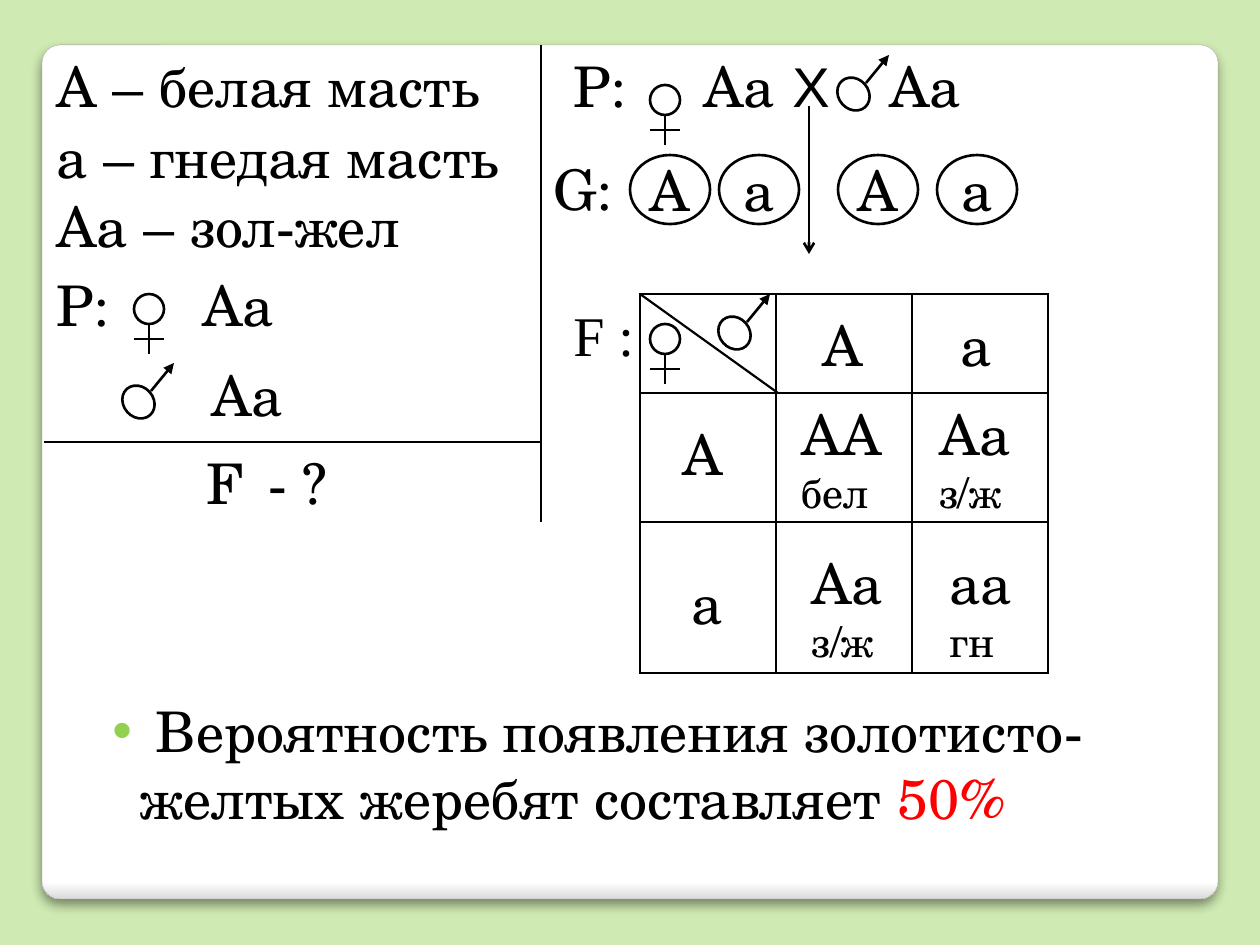
from dataclasses import dataclass
from typing import NamedTuple

from lxml.etree import SubElement
from pptx import Presentation
from pptx.dml.color import RGBColor
from pptx.enum.shapes import MSO_CONNECTOR as CONN, MSO_SHAPE as SHAPE
from pptx.enum.text import MSO_ANCHOR as ANCHOR, MSO_AUTO_SIZE as AUTO, PP_ALIGN as ALIGN
from pptx.oxml import parse_xml
from pptx.oxml.ns import nsdecls, qn
from pptx.util import Emu, Pt

EMU_PER_PX = 914400 / 126


@dataclass(frozen=True)
class Theme:
    back: str = "CFEAB2"
    card: str = "FFFFFF"
    card_edge: str = "DADADA"
    card_line: str = "A4A4A4"
    ink: str = "000000"
    bullet: str = "92D050"
    accent: str = "FF0000"
    font: str = "TeX Gyre Schola"
    sans: str = "Arial"
    roman: str = "Times New Roman"
    large: int = 32
    small: int = 24
    line: float = 1.5
    thin: float = 1.25


T = Theme()


class Run(NamedTuple):
    text: str
    size: int = T.large
    font: str = T.font
    color: str = T.ink


class Label(NamedTuple):
    x: int
    y: int
    w: int
    h: int
    paras: list[list[Run]]
    tabs: tuple[int, ...] = ()
    align: ALIGN = ALIGN.LEFT


class Line(NamedTuple):
    x1: int
    y1: int
    x2: int
    y2: int
    head: str = ""
    width: float = T.line


def px(n: float) -> Emu:
    return Emu(round(n * EMU_PER_PX))


def rgb(color: str) -> RGBColor:
    return RGBColor.from_string(color)


def add_runs(p, runs: list[Run]) -> None:
    for run in runs:
        r = p.add_run()
        r.text = run.text
        r.font.size = Pt(run.size)
        r.font.name = run.font
        r.font.color.rgb = rgb(run.color)


def add_label(shapes, label: Label):
    """Place a text box; labels with tab stops wrap, the others keep one line."""
    sp = shapes.add_textbox(px(label.x), px(label.y), px(label.w), px(label.h))
    tf = sp.text_frame
    tf.word_wrap = bool(label.tabs)
    tf.auto_size = AUTO.SHAPE_TO_FIT_TEXT
    for i, runs in enumerate(label.paras):
        p = tf.add_paragraph() if i else tf.paragraphs[0]
        p.alignment = label.align
        if label.tabs:
            stops = SubElement(p._p.get_or_add_pPr(), qn("a:tabLst"))
            for tab in label.tabs:
                SubElement(stops, qn("a:tab"), pos=str(px(tab)), algn="l")
        add_runs(p, runs)
    return sp


def add_line(shapes, line: Line) -> None:
    cx = shapes.add_connector(CONN.STRAIGHT, px(line.x1), px(line.y1), px(line.x2), px(line.y2))
    cx.line.color.rgb = rgb(T.ink)
    cx.line.width = Pt(line.width)
    if line.head:
        SubElement(cx.line._get_or_add_ln(), qn("a:tailEnd"), type=line.head)
    SubElement(cx._element.spPr, qn("a:effectLst"))


def add_ellipse(shapes, x: int, y: int, w: int, h: int):
    sp = shapes.add_shape(SHAPE.OVAL, px(x), px(y), px(w), px(h))
    sp.shadow.inherit = False
    sp.fill.solid()
    sp.fill.fore_color.rgb = rgb(T.card)
    sp.line.color.rgb = rgb(T.ink)
    sp.line.width = Pt(T.line)
    return sp


def add_female(shapes, x: int, y: int) -> None:
    group = shapes.add_group_shape().shapes
    add_ellipse(group, x, y, 30, 30)
    add_line(group, Line(x + 15, y + 30, x + 15, y + 60))
    add_line(group, Line(x, y + 45, x + 30, y + 45))


def add_male(shapes, x: int, y: int) -> None:
    group = shapes.add_group_shape().shapes
    add_ellipse(group, x, y, 35, 30).rotation = 228.6
    add_line(group, Line(x + 30, y + 4, x + 53, y - 24, "triangle"))


def add_gamete(shapes, x: int, letter: str) -> None:
    tf = add_ellipse(shapes, x, 155, 80, 69).text_frame
    tf.margin_left = tf.margin_right = tf.margin_top = tf.margin_bottom = 0
    tf.word_wrap = False
    tf.vertical_anchor = ANCHOR.MIDDLE
    tf.paragraphs[0].alignment = ALIGN.CENTER
    add_runs(tf.paragraphs[0], [Run(letter)])


def add_card(shapes) -> None:
    """White rounded panel with a grey lower edge and a soft shadow."""
    sp = shapes.add_shape(SHAPE.ROUNDED_RECTANGLE, px(42), px(45), px(1176), px(854))
    sp.adjustments[0] = 0.021
    sp.fill.gradient()
    sp.fill.gradient_angle = 270
    for stop, color, pos in zip(sp.fill.gradient_stops, (T.card, T.card_edge), (0.98, 1)):
        stop.color.rgb = rgb(color)
        stop.position = pos
    sp.line.color.rgb = rgb(T.card_line)
    sp.line.width = Pt(0.16)
    sp._element.spPr.append(parse_xml(
        f'<a:effectLst {nsdecls("a")}><a:outerShdw blurRad="{Pt(6)}" dist="{Pt(4)}" dir="5400000">'
        f'<a:srgbClr val="{T.ink}"><a:alpha val="44000"/></a:srgbClr></a:outerShdw></a:effectLst>'))


def add_punnett_grid(shapes, x: int, y: int, col: int, rows: list[int]) -> None:
    frame = shapes.add_table(len(rows), 3, px(x), px(y), px(3 * col), px(sum(rows)))
    table = frame.table
    table.first_row = table.horz_banding = False
    for column in table.columns:
        column.width = px(col)
    for row, height in zip(table.rows, rows):
        row.height = px(height)
    for cell in table.iter_cells():
        cell.fill.background()
        tc_pr = cell._tc.get_or_add_tcPr()
        for i, side in enumerate("LRTB"):
            tc_pr.insert(i, parse_xml(
                f'<a:ln{side} {nsdecls("a")} w="{Pt(T.line)}"><a:solidFill>'
                f'<a:srgbClr val="{T.ink}"/></a:solidFill></a:ln{side}>'))


def add_conclusion(shapes) -> None:
    runs = [Run(" Вероятность появления золотисто-желтых жеребят составляет "),
            Run("50%", color=T.accent)]
    sp = add_label(shapes, Label(100, 690, 1062, 149, [[]]))
    sp.text_frame.word_wrap = True
    p = sp.text_frame.paragraphs[0]
    p_pr = p._p.get_or_add_pPr()
    p_pr.set("marL", str(px(28)))
    p_pr.set("indent", str(-px(28)))
    SubElement(SubElement(p_pr, qn("a:buClr")), qn("a:srgbClr"), val=T.bullet)
    SubElement(p_pr, qn("a:buFont"), typeface=T.sans)
    SubElement(p_pr, qn("a:buChar"), char="•")
    add_runs(p, runs)


def offspring(x: int, y: int, w: int, genes: str, coat: str) -> Label:
    return Label(x, y, w, 131, [[Run(genes)], [Run(coat, T.small)]])


LABELS = [
    Label(44, 45, 455, 81, [[Run("А – белая масть")]]),
    Label(44, 116, 475, 81, [[Run("а – гнедая масть")]]),
    Label(44, 185, 378, 81, [[Run("Аа – зол-жел")]]),
    Label(44, 264, 297, 81, [[Run("Р:\tАа")]], (146,)),
    Label(74, 354, 224, 81, [[Run("\tАа")]], (125,)),
    Label(194, 442, 165, 81, [[Run("F\t- ?")]], (62,)),
    Label(561, 45, 635, 81, [[Run("Р:\tАа\t"), Run("Х", font=T.sans), Run("\tАа")]], (130, 219, 316)),
    Label(541, 148, 101, 81, [[Run("G:")]]),
    Label(561, 294, 87, 81, [[Run("F :", font=T.roman)]]),
    Label(809, 304, 67, 81, [[Run("А")]], align=ALIGN.CENTER),
    Label(948, 304, 57, 81, [[Run("а")]]),
    Label(669, 413, 67, 81, [[Run("А")]], align=ALIGN.CENTER),
    Label(679, 562, 57, 81, [[Run("а")]]),
    offspring(789, 393, 107, "АА", "бел"),
    offspring(927, 393, 98, "Аа", "з/ж"),
    offspring(799, 542, 98, "Аа", "з/ж"),
    offspring(937, 542, 91, "аа", "гн"),
]
LINES = [
    Line(541, 45, 541, 522),
    Line(44, 442, 541, 442),
    Line(809, 106, 809, 254, "arrow"),
    Line(640, 294, 778, 393, width=T.thin),
]
FEMALES = [(134, 294), (650, 85), (650, 324)]
MALES = [(121, 387), (836, 79), (717, 318)]
GAMETES = [(630, "А"), (719, "а"), (838, "А"), (937, "а")]


def main() -> None:
    prs = Presentation()
    prs.slide_width, prs.slide_height = px(1260), px(945)
    s = prs.slides.add_slide(prs.slide_layouts[6])
    s.background.fill.solid()
    s.background.fill.fore_color.rgb = rgb(T.back)
    shapes = s.shapes
    add_card(shapes)
    add_punnett_grid(shapes, 640, 294, 136, [99, 129, 151])
    for line in LINES:
        add_line(shapes, line)
    for x, y in FEMALES:
        add_female(shapes, x, y)
    for x, y in MALES:
        add_male(shapes, x, y)
    for x, letter in GAMETES:
        add_gamete(shapes, x, letter)
    for label in LABELS:
        add_label(shapes, label)
    add_conclusion(shapes)
    prs.save("out.pptx")


if __name__ == "__main__":
    main()
